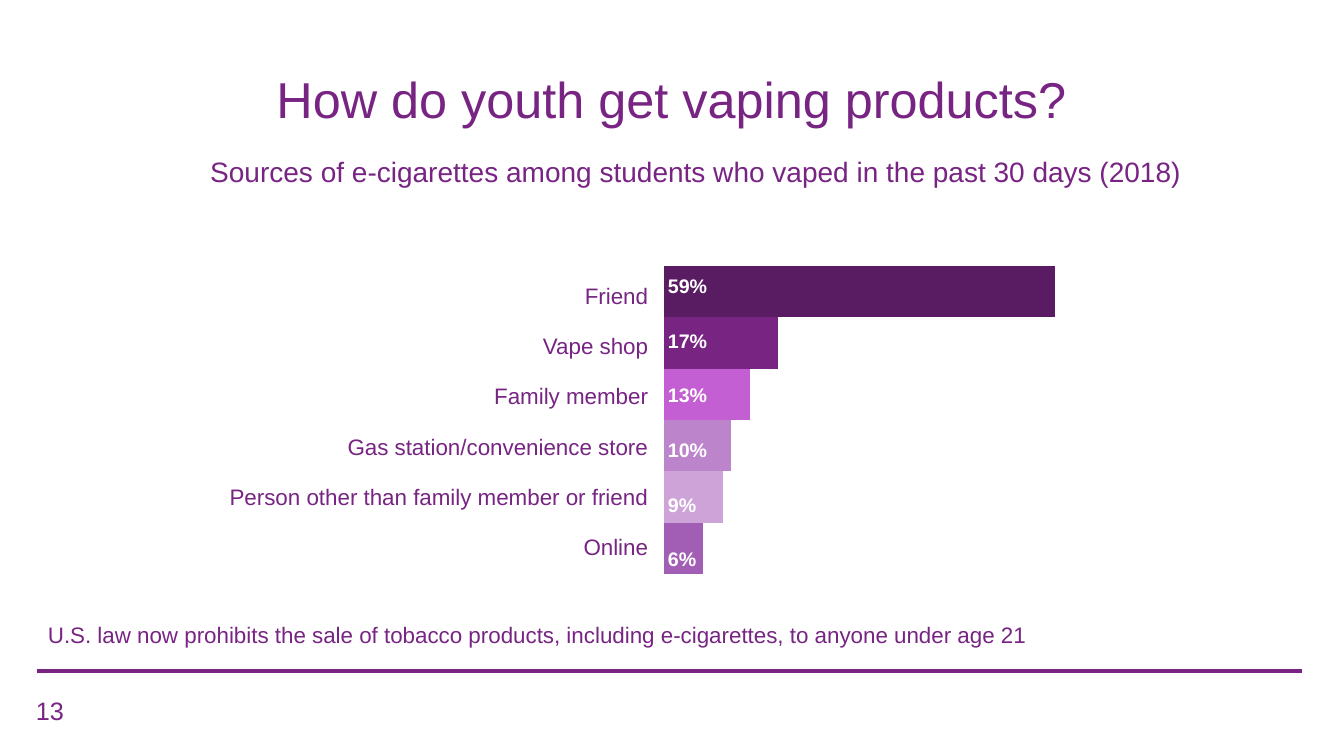
from collections import namedtuple

from lxml import etree
from pptx import Presentation
from pptx.chart.data import CategoryChartData
from pptx.dml.color import RGBColor
from pptx.enum.chart import XL_CHART_TYPE as ChartType
from pptx.enum.shapes import MSO_CONNECTOR as Connector
from pptx.enum.text import MSO_ANCHOR as Anchor, PP_ALIGN as Align
from pptx.oxml import parse_xml
from pptx.oxml.ns import nsdecls, qn
from pptx.util import Emu, Pt

Box = namedtuple("Box", "left top width height")

FONT = "Arial"
PURPLE = RGBColor(0x77, 0x24, 0x83)
WHITE = RGBColor(0xFF, 0xFF, 0xFF)

# Source, share as labelled, bar length, bar colour
SOURCES = [
    ("Friend", "59%", 100, RGBColor(0x59, 0x1B, 0x62)),
    ("Vape shop", "17%", 29, PURPLE),
    ("Family member", "13%", 22, RGBColor(0xC4, 0x5E, 0xD3)),
    ("Gas station/convenience store", "10%", 17, RGBColor(0xBC, 0x84, 0xCA)),
    ("Person other than family member or friend", "9%", 15,
     RGBColor(0xCD, 0xA3, 0xD8)),
    ("Online", "6%", 10, RGBColor(0xA2, 0x5E, 0xB5)),
]


def px(length):
    return Emu(round(length * 914400 / 100.8))


def place(box):
    return [px(length) for length in box]


def fill_text(frame, lines, size, color=PURPLE, bold=False, align=Align.LEFT,
              line_spacing=None, gap=0):
    frame.word_wrap = True
    for index, line in enumerate(lines):
        paragraph = frame.paragraphs[0] if index == 0 else frame.add_paragraph()
        paragraph.alignment = align
        paragraph.line_spacing = line_spacing
        paragraph.space_before = Pt(gap if index else 0)
        run = paragraph.add_run()
        run.text = line
        run.font.name = FONT
        run.font.size = Pt(size)
        run.font.bold = bold
        run.font.color.rgb = color


def add_text(slide, box, lines, size, **style):
    shape = slide.shapes.add_textbox(*place(box))
    fill_text(shape.text_frame, lines, size, **style)


def add_heading(slide, box):
    title = slide.shapes.title
    title.left, title.top, title.width, title.height = place(
        Box(box.left, box.top, box.width, 134))
    title.text_frame.vertical_anchor = Anchor.BOTTOM
    fill_text(title.text_frame, ["How do youth get vaping products?"], 36,
              align=Align.CENTER, line_spacing=0.9)
    add_text(slide, Box(box.left + 119, box.top + 150, 1034, 44),
             ["Sources of e-cigarettes among students who vaped in the past "
              "30 days (2018)"], 20, align=Align.CENTER)


def add_bars(slide, box):
    data = CategoryChartData()
    data.categories = ["1"]
    for number, (_, _, length, _) in enumerate(reversed(SOURCES), 1):
        data.add_series(f"Series {number}", [length])
    chart = slide.shapes.add_chart(
        ChartType.BAR_CLUSTERED, *place(box), data).chart
    chart.has_legend = False
    chart.has_title = False
    chart.font.name = FONT
    chart.font.size = Pt(10)
    chart.font.color.rgb = RGBColor(0, 0, 0)
    chart.value_axis.minimum_scale = 0
    chart.value_axis.maximum_scale = 120
    chart.value_axis.has_major_gridlines = False
    chart.value_axis.visible = False
    chart.category_axis.visible = False

    plot = chart.plots[0]
    plot.gap_width = 182
    plot.overlap = 0
    plot.vary_by_categories = False
    for series, (_, _, _, color) in zip(plot.series, reversed(SOURCES)):
        series.format.fill.solid()
        series.format.fill.fore_color.rgb = color

    # Fixed inner plot area
    plot_area = chart.plots[0]._element.getparent()
    for old_layout in plot_area.findall(qn("c:layout")):
        plot_area.remove(old_layout)
    settings = [("layoutTarget", "inner"), ("xMode", "edge"), ("yMode", "edge"),
                ("x", 0.044), ("y", 0.039), ("w", 0.795), ("h", 0.922)]
    items = "".join(f'<c:{name} val="{value}"/>' for name, value in settings)
    plot_area.insert(0, parse_xml(
        f'<c:layout {nsdecls("c")}><c:manualLayout>{items}'
        '</c:manualLayout></c:layout>'))


def add_sources(slide, box):
    add_bars(slide, Box(box.left + 463, box.top, 591, box.height))
    names, shares, _, _ = zip(*SOURCES)
    add_text(slide, Box(box.left, box.top + 56, 483, 324), names, 16,
             align=Align.RIGHT, line_spacing=Pt(32.7), gap=3.2)
    add_text(slide, Box(box.left + 483, box.top + 50, 483, 353), shares, 14,
             color=WHITE, bold=True, line_spacing=Pt(29), gap=10)


def add_footer(slide, box):
    add_text(slide, Box(box.left + 1, box.top, 1034, 118),
             ["U.S. law now prohibits the sale of tobacco products, including "
              "e-cigarettes, to anyone under age 21"], 16, line_spacing=1.1)
    rule_y = px(box.top + 58)
    rule = slide.shapes.add_connector(
        Connector.STRAIGHT, px(box.left), rule_y, px(box.left + box.width), rule_y)
    rule.line.color.rgb = PURPLE
    rule.line.width = Pt(2.25)
    etree.SubElement(rule._element.spPr, qn("a:effectLst"))
    add_text(slide, Box(box.left - 11, box.top + 77, 302, 40), ["13"], 18)


def main():
    presentation = Presentation()
    presentation.slide_width = px(1344)
    presentation.slide_height = px(756)
    slide = presentation.slides.add_slide(presentation.slide_layouts[5])
    add_heading(slide, Box(60, 0, 1223, 194))
    add_sources(slide, Box(175, 202, 1054, 436))
    add_footer(slide, Box(37, 613, 1265, 118))
    presentation.save("out.pptx")


if __name__ == "__main__":
    main()
